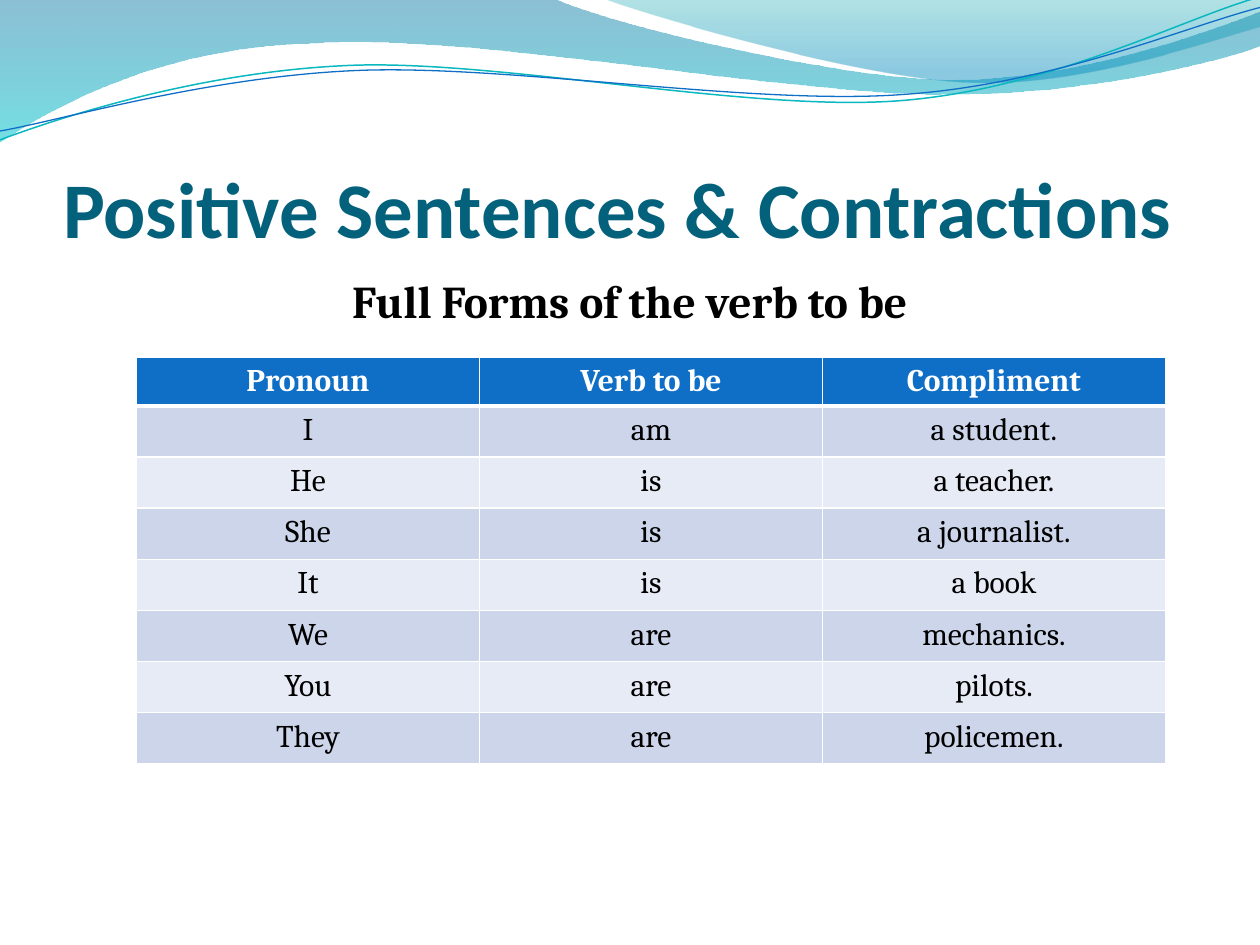
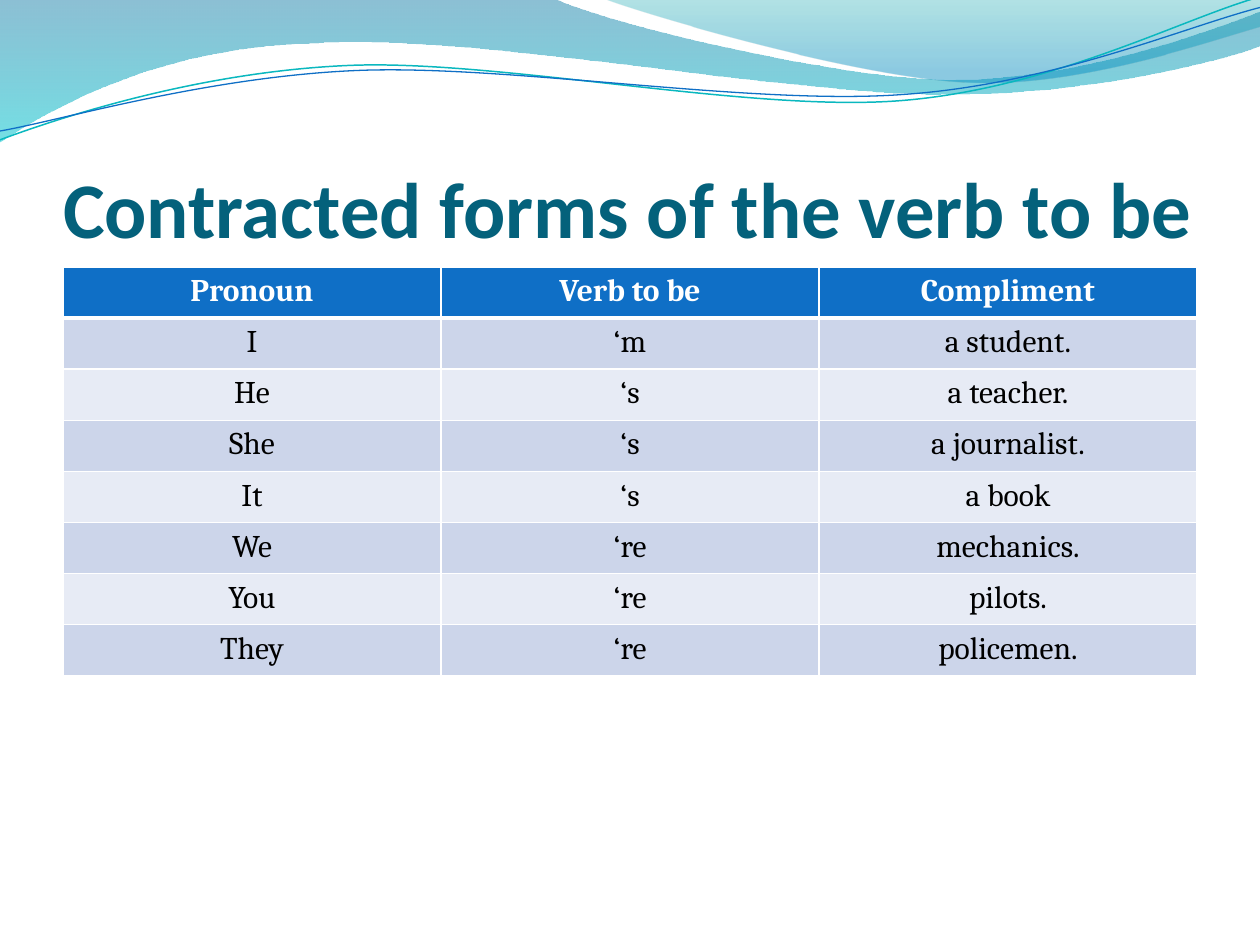
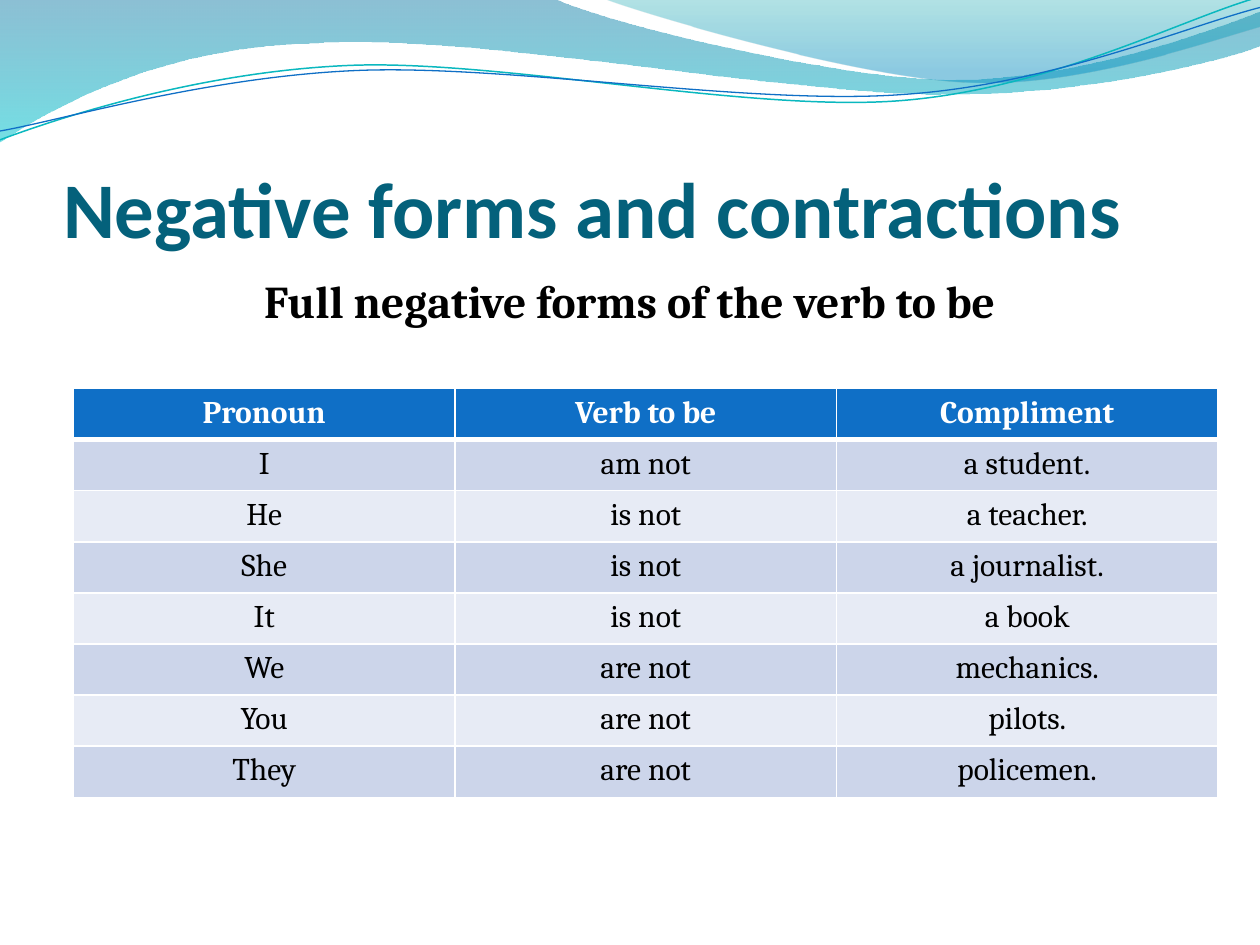
import math

from lxml import etree
from pptx import Presentation
from pptx import util as u
from pptx.dml import color
from pptx.enum import text
from pptx.oxml import ns


class Theme:
    head_font, body_font = "Calibri", "Cambria"
    title_size, sub_size, cell_size = 45, 26, 18
    title, ink, white = "04617B", "000000", "FFFFFF"
    blue, teal = "0F6FC6", "0AB8BF"
    bands = ["E7EBF5", "CCD5EA"]


def style(para, font, size, hue, bold, align):
    para.alignment = align
    para.font.name, para.font.size, para.font.bold = font, u.Pt(size), bold
    para.font.color.rgb = color.RGBColor.from_string(hue)


def edge(props, side, width):
    line = etree.SubElement(props, ns.qn("a:ln" + side), w=str(u.Pt(width)))
    fill = etree.SubElement(line, ns.qn("a:solidFill"))
    etree.SubElement(fill, ns.qn("a:srgbClr"), val=Theme.white)


LEFT, MID = text.PP_ALIGN.LEFT, text.PP_ALIGN.CENTER

# Wave outlines in points: a start, then lines (one point) or curves (three)
band = (0, 0), [
    [(316.8, -0.7)],
    [(342.7, 12.2), (478.1, 45.4), (545.8, 45.4)],
    [(614.2, 45.4), (689.8, 18.7), (720, 6.5)],
    [(720.7, 25.9)],
    [(707.8, 31.7), (626.4, 54.7), (537.1, 54)],
    [(447.8, 54), (275, 20.2), (185, 24.5)],
    [(92.9, 25.9), (33.1, 59.8), (-0.7, 81.4)],
    [(0, 0)]]
fin = (344.9, -0.7), [
    [(366.5, 7.9), (491, 44.6), (553.7, 46.8)],
    [(616.3, 49.7), (691.9, 23), (720, 15.1)],
    [(720, 0)],
    [(344.9, -0.7)]]
upper = (0, 79.9), [
    [(34.6, 67), (113.8, 41), (199.4, 37.4)],
    [(284.4, 33.8), (427, 64.1), (513.4, 57.6)],
    [(599.8, 51.1), (675.4, 10.8), (718.6, -1.4)]]
lower = (0, 74.9), [
    [(33.8, 69.1), (118.1, 43.9), (203.8, 40.3)],
    [(290.2, 36.7), (429.8, 60.5), (516.2, 54)],
    [(601.9, 48.2), (677.5, 15.1), (720, 4.3)]]

# Each wave has gradient stops (place, colour, opacity) or a line
# (colour, width, centre of its tilt)
waves = [
    (band, [(0, "0074A1", 45), (1, "00C6CF", 55)], None),
    (fin, [(0, "00A1A9", 30), (0.8, "008BBF", 45)], None),
    (upper, None, (Theme.teal, 0.85, (359.3, 41.4))),
    (lower, None, (Theme.blue, 0.75, (359.6, 42.5)))]
tilt = 2.7

# Words of the lesson
heads = ["Pronoun", "Verb to be", "Compliment"]
nouns = ["I", "He", "She", "It", "We", "You", "They"]
ends = ["a student.", "a teacher.", "a journalist.", "a book",
        "mechanics.", "pilots.", "policemen."]

# Title, subtitle, forms of the verb, table left, top and width, header height
pages = [
    ("Positive Sentences & Contractions", "Full Forms of the verb to be",
     ["am", "is", "are"], (78, 204, 588), 27),
    ("Contracted forms of the verb to be", None,
     ["‘m", "‘s", "‘re"], (36, 152.6, 648), 29.2),
    ("Negative forms and contractions", "Full negative forms of the verb to be",
     ["am not", "is not", "are not"], (42, 222, 654), 29.2)]
row_high = 29.2
hang = 21.6

deck = Presentation()
deck.slide_width, deck.slide_height = u.Pt(720), u.Pt(540)

for title, sub, (am, has, are), (left, top, width), head_high in pages:
    slide = deck.slides.add_slide(deck.slide_layouts[1 if sub else 5])

    # Title
    box = slide.shapes.title
    box.left, box.top, box.width, box.height = map(u.Pt, (36, 55.5, 648, 90))
    frame = box.text_frame
    frame.text = title
    frame.auto_size = text.MSO_AUTO_SIZE.NONE
    frame.vertical_anchor = text.MSO_ANCHOR.BOTTOM
    frame.margin_left = frame.margin_right = frame.margin_bottom = 0
    style(frame.paragraphs[0], Theme.head_font, Theme.title_size,
          Theme.title, True, LEFT)

    # Subtitle
    if sub:
        box = slide.placeholders[1]
        box.left, box.top, box.width, box.height = map(
            u.Pt, (36, 152.6, 648, 345.6))
        box.text_frame.text = sub
        para = box.text_frame.paragraphs[0]
        style(para, Theme.body_font, Theme.sub_size, Theme.ink, True, MID)
        props = para._p.get_or_add_pPr()
        props.set("marL", str(u.Pt(hang)))
        props.set("indent", str(u.Pt(-hang)))
        bullet = etree.Element(ns.qn("a:buNone"))
        props.insert_element_before(bullet, "a:tabLst", "a:defRPr")

    # Table
    verbs = [am] + [has] * 3 + [are] * 3
    rows = [heads, *zip(nouns, verbs, ends)]
    high = head_high + row_high * len(nouns)
    grid = slide.shapes.add_table(len(rows), len(heads), u.Pt(left), u.Pt(top),
                                  u.Pt(width), u.Pt(high)).table
    for r, row in enumerate(rows):
        grid.rows[r].height = u.Pt(row_high if r else head_high)
        for c, word in enumerate(row):
            cell = grid.cell(r, c)
            cell.text = word
            style(cell.text_frame.paragraphs[0], Theme.body_font,
                  Theme.cell_size, Theme.ink if r else Theme.white,
                  r == 0, MID)
            props = cell._tc.get_or_add_tcPr()
            for side in "LRTB":
                thick = (r, side) in [(0, "B"), (1, "T")]
                edge(props, side, 3 if thick else 1)
            cell.fill.solid()
            cell.fill.fore_color.rgb = color.RGBColor.from_string(
                Theme.bands[r % 2] if r else Theme.blue)

# Waves, drawn once and moved to the master
tree = deck.slide_master.element.cSld.spTree
cos, sin = math.cos(math.radians(tilt)), math.sin(math.radians(tilt))
for n, ((start, parts), stops, line) in enumerate(waves):
    dots = [start] + [dot for part in parts for dot in part]
    if line:
        hue, width, (mx, my) = line
        dots = [(mx + (x - mx) * cos - (y - my) * sin,
                 my + (x - mx) * sin + (y - my) * cos) for x, y in dots]
    dots = [(x * 100, y * 100) for x, y in dots]
    pen = deck.slides[0].shapes.build_freeform(*dots[0], scale=u.Pt(1) / 100)
    pen.add_line_segments(dots[1:], close=bool(stops))
    wave = pen.convert_to_shape()
    wave.shadow.inherit = False

    # Join each three steps of a curve into one Bézier segment
    trace = wave._element.find(".//" + ns.qn("a:path"))
    legs = iter(trace.findall(ns.qn("a:lnTo")))
    for part in parts:
        group = [next(legs) for _ in part]
        if len(group) == 3:
            curve = etree.Element(ns.qn("a:cubicBezTo"))
            group[0].addprevious(curve)
            for leg in group:
                curve.append(leg[0])
                trace.remove(leg)

    if stops:
        wave.line.fill.background()
        wave.fill.gradient()
        wave.fill.gradient_angle = 270
        for stop, (place, hue, alpha) in zip(wave.fill.gradient_stops, stops):
            stop.position = place
            stop.color.rgb = color.RGBColor.from_string(hue)
            tint = stop._gs.find(ns.qn("a:srgbClr"))
            etree.SubElement(tint, ns.qn("a:alpha"), val=str(alpha * 1000))
    else:
        wave.rotation = 360 - tilt
        wave.fill.background()
        wave.line.color.rgb = color.RGBColor.from_string(hue)
        wave.line.width = u.Pt(width)
    wave._element.nvSpPr.cNvPr.set("id", str(20 + n))
    tree.insert(2 + n, wave._element)

deck.save("out.pptx")
